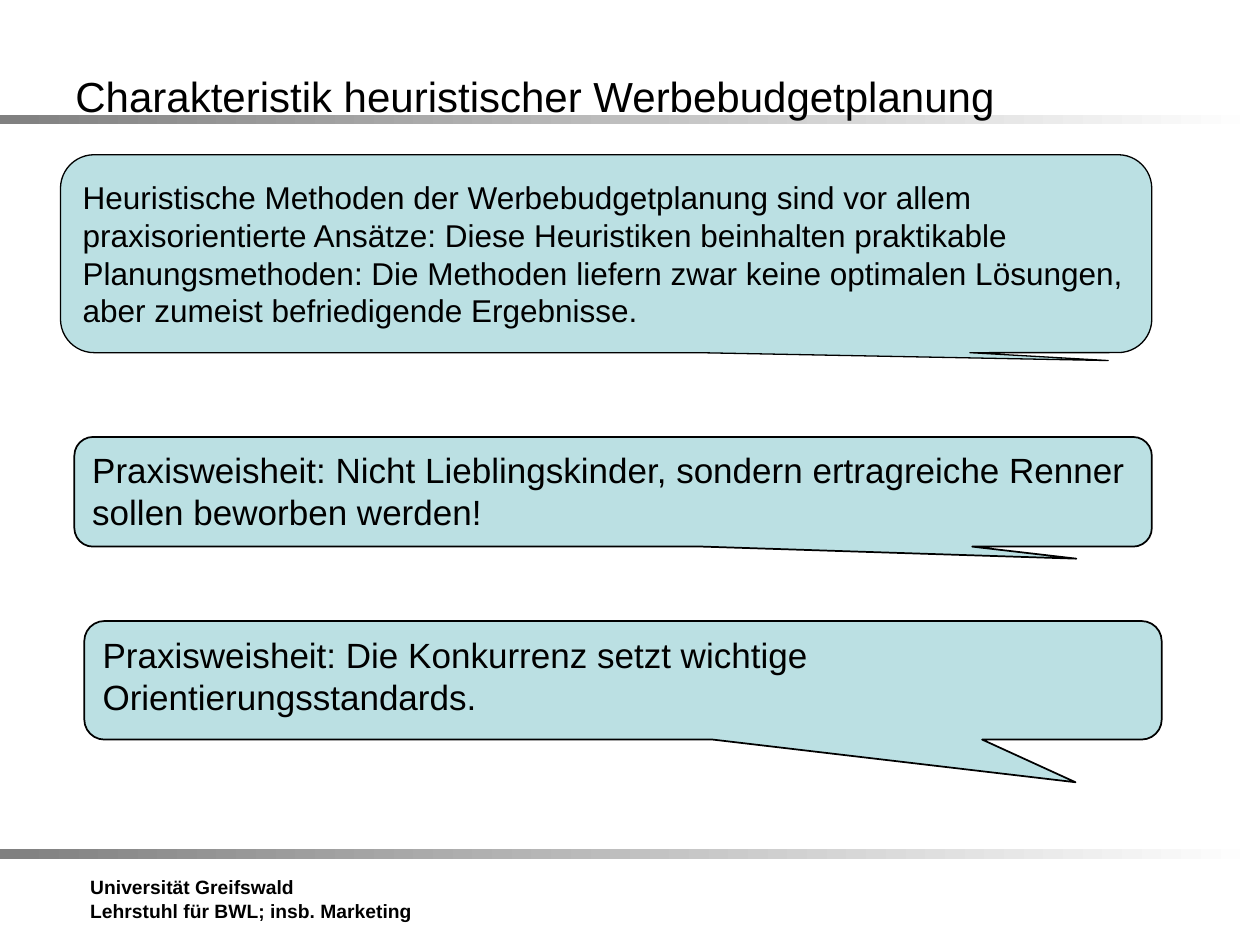
import pptx
import pptx.util
import pptx.dml.color
import pptx.enum.shapes
import pptx.enum.text

Cm = pptx.util.Cm
Pt = pptx.util.Pt
RGB = pptx.dml.color.RGBColor
SHAPE = pptx.enum.shapes.MSO_SHAPE
ANCHOR = pptx.enum.text.MSO_ANCHOR
ALIGN = pptx.enum.text.PP_ALIGN

BLACK = RGB(0x00, 0x00, 0x00)
GREY = RGB(0x80, 0x80, 0x80)
WHITE = RGB(0xFF, 0xFF, 0xFF)
AQUA = RGB(0xBB, 0xE0, 0xE3)

WIDTH, HEIGHT = 25.4, 19.05


class Page:
    """Holds the text style and the current slide."""

    base = {"name": "Arial", "bold": False}

    def __init__(self, slide):
        self.slide = slide

    def label(self, shape, lines, size, anchor, **extra):
        frame = shape.text_frame
        frame.word_wrap = True
        frame.vertical_anchor = anchor
        frame.text = "\n".join(lines)
        style = {**self.base, "size": Pt(size), **extra}
        for para in frame.paragraphs:
            para.alignment = ALIGN.LEFT
            for key, value in style.items():
                setattr(para.font, key, value)
            para.font.color.rgb = BLACK

    def text(self, box, lines, size, anchor=ANCHOR.TOP, **extra):
        shape = self.slide.shapes.add_textbox(*map(Cm, box))
        self.label(shape, lines, size, anchor, **extra)

    def shape(self, kind, box):
        shape = self.slide.shapes.add_shape(kind, *map(Cm, box))
        shape.shadow.inherit = False
        return shape

    def bar(self, top):
        bar = self.shape(SHAPE.RECTANGLE, (0, top, WIDTH, 0.2))
        bar.line.fill.background()
        bar.fill.gradient()
        bar.fill.gradient_angle = 0
        for stop, place, color in zip(bar.fill.gradient_stops, (0, 1), (GREY, WHITE)):
            stop.position = place
            stop.color.rgb = color

    def bubble(self, box, tip, text, size, line=1, anchor=ANCHOR.TOP):
        shape = self.shape(SHAPE.ROUNDED_RECTANGULAR_CALLOUT, box)
        for index, value in enumerate((*tip, 0.17)):
            shape.adjustments[index] = value
        shape.fill.solid()
        shape.fill.fore_color.rgb = AQUA
        shape.line.color.rgb = BLACK
        shape.line.width = Pt(line)
        self.label(shape, [text], size, anchor)


def main():
    deck = pptx.Presentation()
    deck.slide_width, deck.slide_height = Cm(WIDTH), Cm(HEIGHT)
    page = Page(deck.slides.add_slide(deck.slide_layouts[6]))

    # Bars and footer
    for top in (2.31, 17.12):
        page.bar(top)
    page.text((1.57, 17.53, 7.39, 1.5),
              ["Universität Greifswald", "Lehrstuhl für BWL; insb. Marketing"],
              11, bold=True)

    # Title
    page.text((1.27, 1.12, 22.86, 1.6),
              ["Charakteristik heuristischer Werbebudgetplanung"],
              24, ANCHOR.MIDDLE)

    # Main statement
    page.bubble((1.22, 3.12, 22, 3.99), (0.46, 0.54),
                "Heuristische Methoden der Werbebudgetplanung sind vor allem "
                "praxisorientierte Ansätze: Diese Heuristiken beinhalten praktikable "
                "Planungsmethoden: Die Methoden liefern zwar keine optimalen Lösungen, "
                "aber zumeist befriedigende Ergebnisse.",
                18, 0.75, ANCHOR.MIDDLE)

    # Practical wisdom
    page.bubble((1.5, 8.81, 21.72, 2.21), (0.43, 0.61),
                "Praxisweisheit: Nicht Lieblingskinder, sondern ertragreiche Renner "
                "sollen beworben werden!", 20)
    page.bubble((1.7, 12.52, 21.72, 2.39), (0.42, 0.86),
                "Praxisweisheit: Die Konkurrenz setzt wichtige "
                "Orientierungsstandards.", 20)

    deck.save("out.pptx")


if __name__ == "__main__":
    main()
